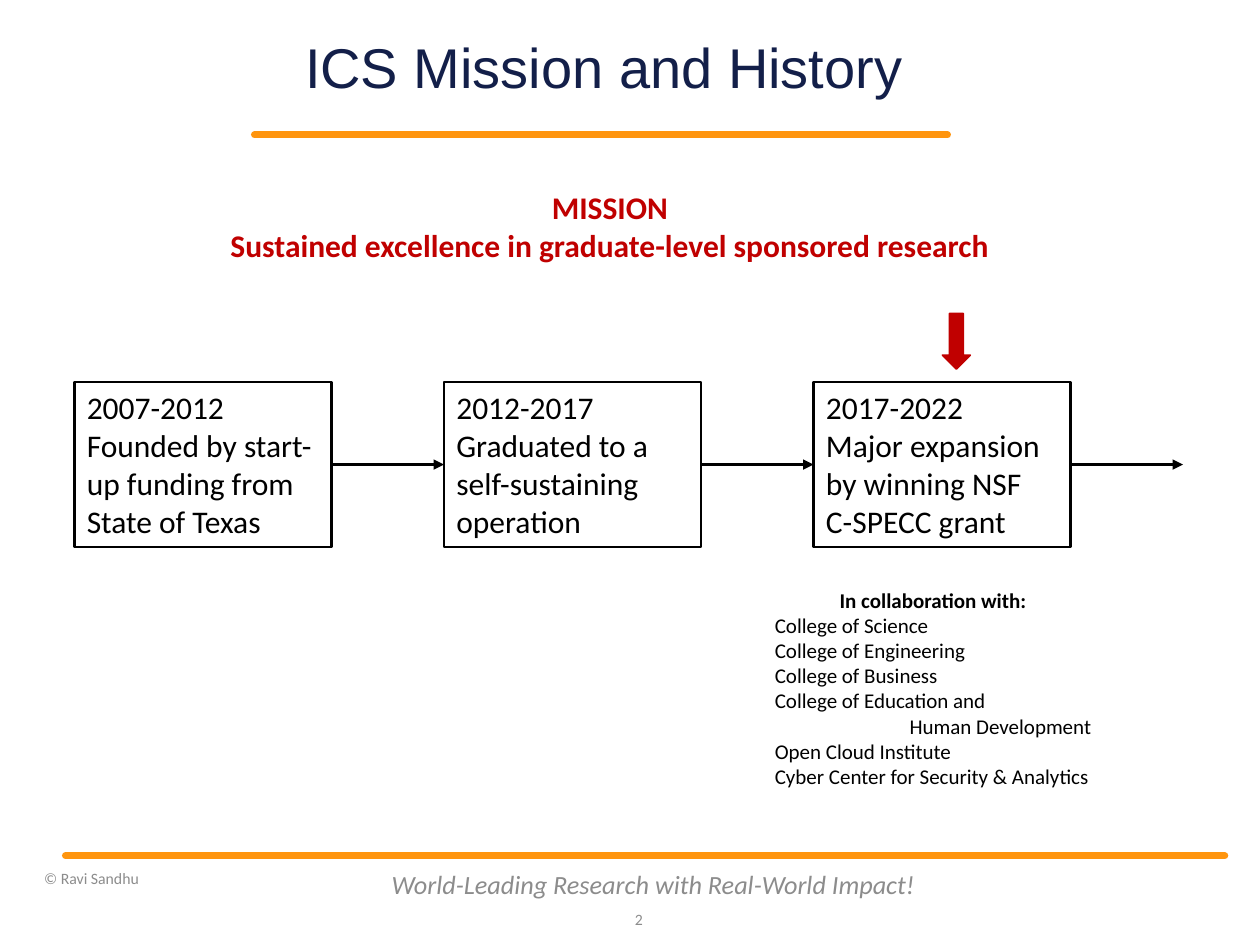
"""Build the ICS mission and history slide."""
from dataclasses import dataclass

from lxml import etree
from pptx import Presentation
from pptx import util as u
from pptx.dml.color import RGBColor
from pptx.enum import shapes, text
from pptx.oxml import ns

BLACK = RGBColor(0x00, 0x00, 0x00)
GRAY = RGBColor(0x8C, 0x8C, 0x8C)
NAVY = RGBColor(0x13, 0x1F, 0x49)
ORANGE = RGBColor(0xFF, 0x95, 0x0E)
RED = RGBColor(0xC0, 0x00, 0x00)

LEFT, CENTER, RIGHT = text.PP_ALIGN.LEFT, text.PP_ALIGN.CENTER, text.PP_ALIGN.RIGHT
TOP, MIDDLE = text.MSO_ANCHOR.TOP, text.MSO_ANCHOR.MIDDLE

FIRST, STEP = 1.5, 7.45
BOX_TOP, BOX_WIDTH, BOX_HEIGHT = 7.7, 5.18, 3.33


@dataclass
class Style:
    size: float
    color: RGBColor
    font: str = "Calibri"
    bold: bool = False
    slant: bool = False
    align: int = LEFT


@dataclass
class Label:
    words: str
    left: float
    top: float
    width: float
    height: float
    style: Style
    anchor: int = TOP
    wrap: bool = True


@dataclass
class Line:
    left: float
    right: float
    top: float
    color: RGBColor
    width: float
    arrow: bool = False


LABELS = [
    Label("World-Leading Research with Real-World Impact!", 7.62, 17.32, 11.1, 1.02,
          Style(15, GRAY, slant=True, align=CENTER), MIDDLE),
    Label("2", 12.19, 18.03, 1.02, 1.02, Style(9, GRAY, align=RIGHT), MIDDLE),
    Label("© Ravi Sandhu", 0.64, 17.25, 6.99, 0.91, Style(9, GRAY), MIDDLE),
    Label("MISSION\nSustained excellence in graduate-level sponsored research",
          4.22, 3.66, 16.15, 1.8, Style(18, RED, bold=True, align=CENTER), wrap=False),
]
TITLE = Label("ICS Mission and History", 5.51, 0.76, 13.34, 1.3,
              Style(32, NAVY, "Arial", align=CENTER), MIDDLE)
PARTNERS = Label(
    "In collaboration with:\nCollege of Science\nCollege of Engineering\n"
    "College of Business\nCollege of Education and\nHuman Development\n"
    "Open Cloud Institute\nCyber Center for Security & Analytics",
    15.37, 11.71, 6.88, 4.37, Style(12, BLACK))
STAGES = [
    "2007-2012\nFounded by start-up funding from State of Texas",
    "2012-2017\nGraduated to a self-sustaining operation",
    "2017-2022\nMajor expansion by winning NSF\vC-SPECC grant",
]
RULES = [Line(5.13, 19.1, 2.72, ORANGE, 4), Line(1.32, 24.69, 17.25, ORANGE, 4)]


def write(frame, words: str, style: Style) -> None:
    """Fill a text frame and format every run."""
    frame.text = words
    for para in frame.paragraphs:
        para.alignment = style.align
        for run in para.runs:
            font = run.font
            font.name, font.size = style.font, u.Pt(style.size)
            font.bold, font.italic = style.bold, style.slant
            font.color.rgb = style.color


def add_label(slide, label: Label):
    """Add a text box and return its frame."""
    box = slide.shapes.add_textbox(*map(u.Cm, (label.left, label.top, label.width, label.height)))
    frame = box.text_frame
    frame.word_wrap = label.wrap
    frame.vertical_anchor = label.anchor
    write(frame, label.words, label.style)
    return frame


def add_line(slide, line: Line) -> None:
    """Add a level line, with an arrowhead or with round ends."""
    link = slide.shapes.add_connector(
        shapes.MSO_CONNECTOR.STRAIGHT,
        *map(u.Cm, (line.left, line.top, line.right, line.top)))
    link.line.color.rgb = line.color
    link.line.width = u.Pt(line.width)
    stroke = link.line._get_or_add_ln()
    if line.arrow:
        etree.SubElement(stroke, ns.qn("a:tailEnd"), type="triangle")
    else:
        stroke.set("cap", "rnd")
    etree.SubElement(link._element.spPr, ns.qn("a:effectLst"))


def add_stage(slide, left: float, words: str) -> None:
    """Add an outlined box for one stage."""
    box = slide.shapes.add_shape(
        shapes.MSO_SHAPE.RECTANGLE, *map(u.Cm, (left, BOX_TOP, BOX_WIDTH, BOX_HEIGHT)))
    box.shadow.inherit = False
    box.fill.background()
    box.line.color.rgb = BLACK
    box.line.width = u.Pt(1.5)
    box.text_frame.word_wrap = True
    box.text_frame.vertical_anchor = TOP
    write(box.text_frame, words, Style(18, BLACK))


def add_title(slide) -> None:
    """Add the title without margins."""
    frame = add_label(slide, TITLE)
    frame.margin_left = frame.margin_right = frame.margin_top = frame.margin_bottom = 0
    frame.paragraphs[0].line_spacing = 0.9


def add_partners(slide) -> None:
    """Add the partner list with its heading and indented name."""
    paras = add_label(slide, PARTNERS).paragraphs
    paras[0].alignment = CENTER
    paras[0].runs[0].font.bold = True
    paras[5].alignment = RIGHT


def add_marker(slide) -> None:
    """Add the red arrow above the last stage."""
    mark = slide.shapes.add_shape(
        shapes.MSO_SHAPE.DOWN_ARROW, *map(u.Cm, (19, 6.32, 0.56, 1.12)))
    mark.shadow.inherit = False
    mark.fill.solid()
    mark.fill.fore_color.rgb = RED
    mark.line.color.rgb = RED
    mark.line.width = u.Pt(1)


def main() -> None:
    """Build and save the slide."""
    deck = Presentation()
    deck.slide_width, deck.slide_height = u.Cm(25.4), u.Cm(19.05)
    slide = deck.slides.add_slide(deck.slide_layouts[6])
    for rule in RULES:
        add_line(slide, rule)
    add_title(slide)
    for label in LABELS:
        add_label(slide, label)
    for index, words in enumerate(STAGES):
        left = FIRST + index * STEP
        add_stage(slide, left, words)
        add_line(slide, Line(left + BOX_WIDTH, left + STEP, BOX_TOP + BOX_HEIGHT / 2,
                             BLACK, 1.5, arrow=True))
    add_partners(slide)
    add_marker(slide)
    deck.save("out.pptx")


if __name__ == "__main__":
    main()
